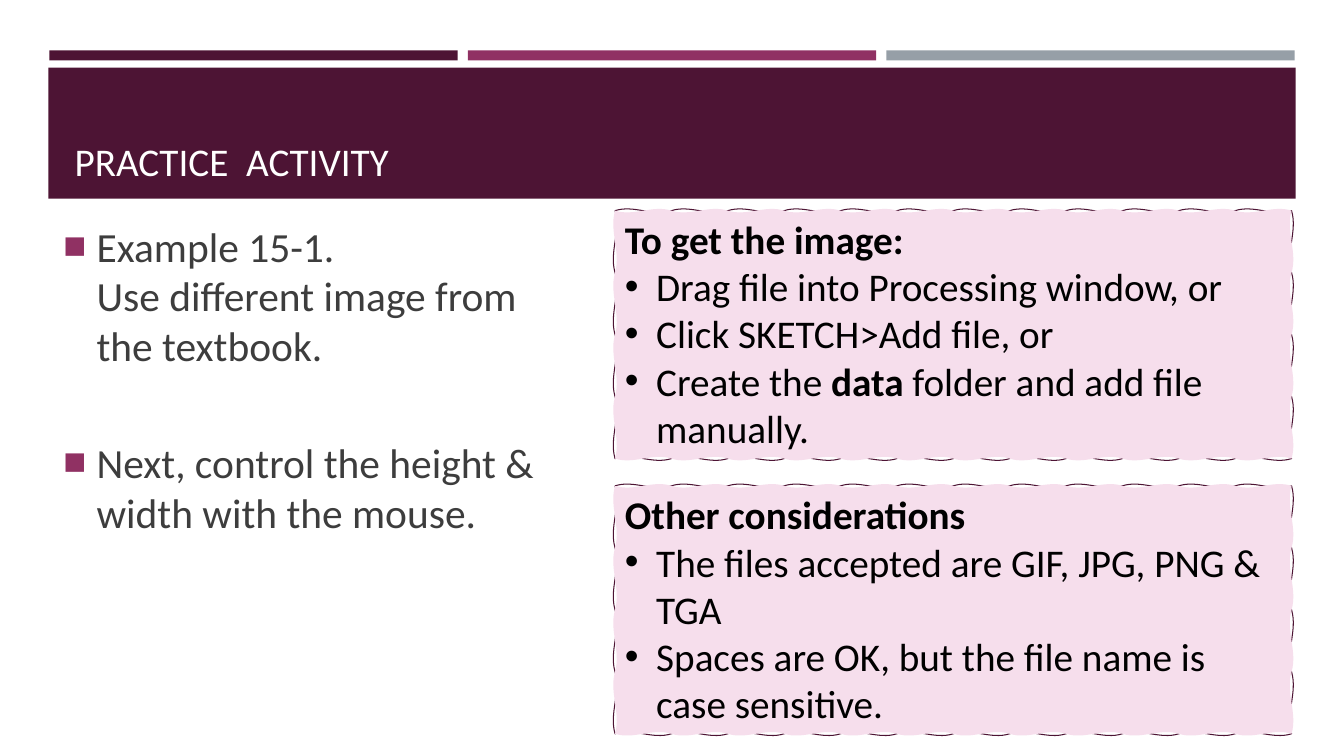
from copy import deepcopy
from math import hypot

from lxml.etree import SubElement
from pptx import Presentation
from pptx.dml.color import RGBColor
from pptx.enum.shapes import MSO_SHAPE as SHAPE
from pptx.enum.text import MSO_ANCHOR as ANCHOR, PP_ALIGN as ALIGN
from pptx.oxml.ns import qn
from pptx.util import Inches, Pt

PLUM = RGBColor(0x4D, 0x14, 0x34)
MAGENTA = RGBColor(0x90, 0x31, 0x63)
GREY = RGBColor(0x96, 0x9F, 0xA7)
PINK = RGBColor(0xF6, 0xDE, 0xEC)
DARK = RGBColor(0x3D, 0x3D, 0x3D)
BLACK = RGBColor(0, 0, 0)
WHITE = RGBColor(0xFF, 0xFF, 0xFF)
FONT = "Calibri"
SWING = Inches(0.06)  # how far the control points of a wave leave the edge

IMAGE_STEPS = [
    [("Drag file into Processing window, or", False)],
    [("Click SKETCH>Add file, or", False)],
    [("Create the ", False), ("data", True), (" folder and add file manually.", False)],
]
CONSIDERATIONS = [
    [("The files accepted are GIF, JPG, PNG & TGA", False)],
    [("Spaces are OK, but the file name is case sensitive.", False)],
]


def add_bullet(p, char, indent, color=None, percent=100):
    pPr = p._p.get_or_add_pPr()
    pPr.set("marL", str(Inches(indent)))
    pPr.set("indent", str(-Inches(indent)))
    if color is not None:
        clr = SubElement(pPr, qn("a:buClr"))
        SubElement(clr, qn("a:srgbClr")).set("val", str(color))
    SubElement(pPr, qn("a:buSzPct")).set("val", str(percent * 1000))
    SubElement(pPr, qn("a:buFont")).set("typeface", "Arial")
    SubElement(pPr, qn("a:buChar")).set("char", char)


def write(p, text, size=28, color=BLACK, bold=False):
    """Append text to a paragraph; a newline becomes a line break."""
    p.alignment = ALIGN.LEFT
    for i, line in enumerate(text.split("\n")):
        if i:
            p.add_line_break()
        r = p.add_run()
        r.text = line
        r.font.name = FONT
        r.font.size = Pt(size)
        r.font.bold = bold
        r.font.color.rgb = color


def add_band(s, x, y, w, h, color):
    sp = s.shapes.add_shape(SHAPE.RECTANGLE, Inches(x), Inches(y), Inches(w), Inches(h))
    sp.shadow.inherit = False
    sp.fill.solid()
    sp.fill.fore_color.rgb = color
    sp.line.fill.background()


def make_wavy(path, swing):
    """Turn each straight segment of a path into one S-shaped curve."""
    x0 = y0 = 0
    for step in path:
        pt = step.find(qn("a:pt"))
        if pt is None:
            continue
        x1, y1 = int(pt.get("x")), int(pt.get("y"))
        if step.tag == qn("a:lnTo"):
            dx, dy = x1 - x0, y1 - y0
            nx, ny = swing * dy / hypot(dx, dy), -swing * dx / hypot(dx, dy)
            curve = path.makeelement(qn("a:cubicBezTo"), {})
            for t, side in ((1 / 3, 1), (2 / 3, -1), (1, 0)):
                node = SubElement(curve, qn("a:pt"))
                node.set("x", str(round(x0 + dx * t + side * nx)))
                node.set("y", str(round(y0 + dy * t + side * ny)))
            path.replace(step, curve)
        x0, y0 = x1, y1


def add_wavy_rect(s, x, y, w, h, across=12, down=4):
    """One shape of two wavy paths: an outline and, over it, a fill."""
    corners = [(x, y), (x + w, y), (x + w, y + h), (x, y + h)]
    nodes = []
    for i, (x0, y0) in enumerate(corners):
        x1, y1 = corners[(i + 1) % 4]
        n = down if i % 2 else across
        nodes += [(Inches(x0 + (x1 - x0) * k / n), Inches(y0 + (y1 - y0) * k / n))
                  for k in range(1, n + 1)]
    builder = s.shapes.build_freeform(Inches(x), Inches(y))
    builder.add_line_segments(nodes, close=True)
    sp = builder.convert_to_shape()
    sp.shadow.inherit = False

    outline = sp._element.find(".//" + qn("a:path"))
    inside = deepcopy(outline)
    outline.addnext(inside)
    outline.set("fill", "none")
    inside.set("stroke", "0")
    make_wavy(outline, SWING)
    make_wavy(inside, -SWING)
    return sp


def add_note(s, y, heading, items):
    sp = add_wavy_rect(s, 6.1, y, 6.71, 2.46)
    sp.fill.solid()
    sp.fill.fore_color.rgb = PINK
    sp.line.color.rgb = PLUM
    sp.line.width = Pt(0.75)
    tf = sp.text_frame
    tf.word_wrap = True
    tf.vertical_anchor = ANCHOR.TOP
    write(tf.paragraphs[0], heading, bold=True)
    for item in items:
        p = tf.add_paragraph()
        add_bullet(p, "•", 0.31)
        for text, bold in item:
            write(p, text, bold=bold)


def add_tasks(s, tasks):
    sp = s.shapes.add_textbox(Inches(0.53), Inches(2.17), Inches(5.3), Inches(3.17))
    tf = sp.text_frame
    tf.word_wrap = True
    tf.vertical_anchor = ANCHOR.MIDDLE
    for i, (text, after) in enumerate(tasks):
        p = tf.add_paragraph() if i else tf.paragraphs[0]
        p.space_before = Pt(6)
        p.space_after = Pt(after)
        add_bullet(p, "■", 0.33, MAGENTA, 92)
        write(p, text, size=29.6, color=DARK)


def format_title(s, text):
    title = s.shapes.title
    title.left, title.top = Inches(0.64), Inches(0.77)
    title.width, title.height = Inches(12.06), Inches(1.11)
    title.text_frame.vertical_anchor = ANCHOR.BOTTOM
    write(title.text_frame.paragraphs[0], text, color=WHITE)
    s.shapes._spTree.append(title._element)  # in front of the band


def main():
    prs = Presentation()
    prs.slide_width, prs.slide_height = Inches(13.33), Inches(7.5)
    s = prs.slides.add_slide(prs.slide_layouts[5])

    for i, color in enumerate((PLUM, MAGENTA, GREY)):
        add_band(s, 0.49 + 4.15 * i, 0.5, 4.05, 0.1, color)
    add_band(s, 0.48, 0.67, 12.37, 1.3, PLUM)
    format_title(s, "PRACTICE  ACTIVITY")

    add_tasks(s, [
        ("Example 15-1.\nUse different image from the textbook.", 42),
        ("Next, control the height & width with the mouse.", 6),
    ])
    add_note(s, 2.09, "To get the image:", IMAGE_STEPS)
    add_note(s, 4.82, "Other considerations", CONSIDERATIONS)
    prs.save("out.pptx")


if __name__ == "__main__":
    main()
